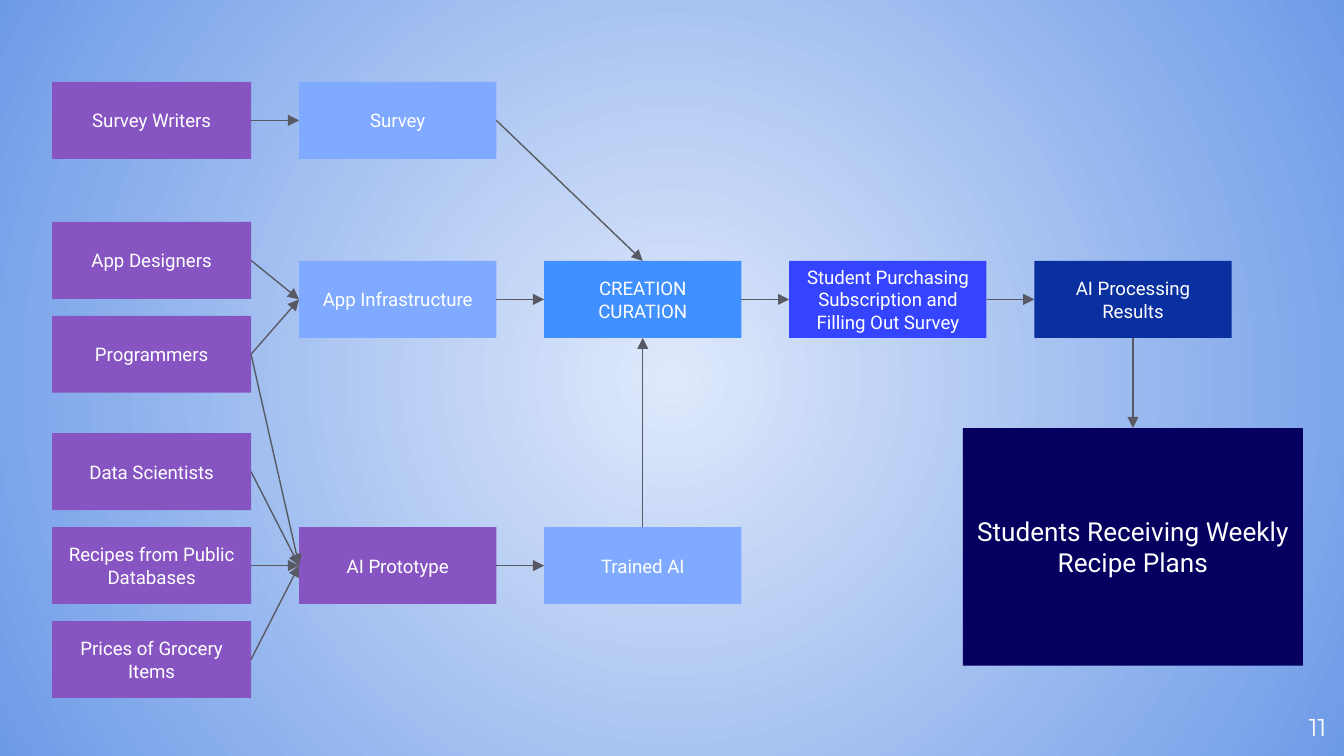
from dataclasses import dataclass

from lxml.etree import SubElement
from pptx import Presentation
from pptx.dml.color import RGBColor
from pptx.enum.shapes import MSO_CONNECTOR, MSO_SHAPE
from pptx.enum.text import MSO_ANCHOR, PP_ALIGN
from pptx.oxml.ns import qn
from pptx.util import Pt


@dataclass(frozen=True)
class Theme:
    center: str = "DFE9FB"
    edge: str = "6E9BE7"
    purple: str = "8755C2"
    light: str = "80AAFF"
    bright: str = "4190FF"
    indigo: str = "3544FF"
    navy: str = "0A2F9E"
    midnight: str = "050060"
    arrow: str = "585963"
    text: str = "FFFFFF"
    font: str = "Roboto"
    number_font: str = "Montserrat"
    body_size: float = 10
    result_size: float = 14
    number_size: float = 13


THEME = Theme()

# Grid, in points
BOX_HEIGHT = 41.2
INPUT_LEFT, INPUT_WIDTH = 27.9, 106.6
STEP_LEFT, STEP_WIDTH, STEP_PITCH = 160.2, 105.7, 131.3
STEP_COLUMNS = [STEP_LEFT + STEP_PITCH * index for index in range(4)]
SURVEY_ROW, APP_ROW, AI_ROW = 43.9, 139.8, 282.4
INPUT_PITCH = 50.3
RESULT_TOP, RESULT_WIDTH, RESULT_HEIGHT = 229.3, 182.2, 127.3
RESULT_LEFT = STEP_COLUMNS[3] + (STEP_WIDTH - RESULT_WIDTH) / 2

TOP, LEFT, BOTTOM, RIGHT = range(4)

INPUTS = [
    ("Survey Writers", SURVEY_ROW),
    ("App Designers", APP_ROW - 20.9),
    ("Programmers", APP_ROW - 20.9 + INPUT_PITCH),
    ("Data Scientists", AI_ROW - INPUT_PITCH),
    ("Recipes from Public Databases", AI_ROW),
    ("Prices of Grocery Items", AI_ROW + INPUT_PITCH),
]

# Text, column, top, colour
STEPS = [
    ("Survey", 0, SURVEY_ROW, THEME.light),
    ("App Infrastructure", 0, APP_ROW, THEME.light),
    ("AI Prototype", 0, AI_ROW, THEME.purple),
    ("CREATION CURATION", 1, APP_ROW, THEME.bright),
    ("Trained AI", 1, AI_ROW, THEME.light),
    ("Student Purchasing Subscription and Filling Out Survey", 2, APP_ROW, THEME.indigo),
    ("AI Processing Results", 3, APP_ROW, THEME.navy),
]
RESULT = "Students Receiving Weekly Recipe Plans"

# Start, its side, end, its side
ARROWS = [
    ("Survey Writers", RIGHT, "Survey", LEFT),
    ("App Infrastructure", RIGHT, "CREATION CURATION", LEFT),
    ("CREATION CURATION", RIGHT, STEPS[5][0], LEFT),
    (STEPS[5][0], RIGHT, "AI Processing Results", LEFT),
    ("AI Processing Results", BOTTOM, RESULT, TOP),
    ("Trained AI", TOP, "CREATION CURATION", BOTTOM),
    ("AI Prototype", RIGHT, "Trained AI", LEFT),
    ("App Designers", RIGHT, "App Infrastructure", LEFT),
    ("Programmers", RIGHT, "App Infrastructure", LEFT),
    ("Programmers", RIGHT, "AI Prototype", LEFT),
    ("Data Scientists", RIGHT, "AI Prototype", LEFT),
    ("Survey", RIGHT, "CREATION CURATION", TOP),
    ("Recipes from Public Databases", RIGHT, "AI Prototype", LEFT),
    ("Prices of Grocery Items", RIGHT, "AI Prototype", LEFT),
]


def set_background(slide):
    fill = slide.background.fill
    fill.gradient()
    for stop, color in zip(fill.gradient_stops, (THEME.center, THEME.edge)):
        stop.color.rgb = RGBColor.from_string(color)
    # Turn the linear gradient into a radial one
    gradient = slide.element.find(".//" + qn("a:gradFill"))
    gradient.remove(gradient.find(qn("a:lin")))
    radial = SubElement(gradient, qn("a:path"), path="circle")
    SubElement(radial, qn("a:fillToRect"), l="50000", t="50000", r="50000", b="50000")


def write_text(shape, text, size, font, alignment, inset):
    frame = shape.text_frame
    frame.word_wrap = True
    frame.vertical_anchor = MSO_ANCHOR.MIDDLE
    frame.margin_left = frame.margin_right = Pt(inset)
    frame.margin_top = frame.margin_bottom = Pt(inset)
    paragraph = frame.paragraphs[0]
    paragraph.text = text
    paragraph.alignment = alignment
    paragraph.font.size = Pt(size)
    paragraph.font.name = font
    paragraph.font.color.rgb = RGBColor.from_string(THEME.text)


def add_box(slide, text, left, top, width, height, color, size=THEME.body_size):
    shape = slide.shapes.add_shape(
        MSO_SHAPE.RECTANGLE, Pt(left), Pt(top), Pt(width), Pt(height))
    shape.shadow.inherit = False
    shape.fill.solid()
    shape.fill.fore_color.rgb = RGBColor.from_string(color)
    shape.line.fill.background()
    write_text(shape, text, size, THEME.font, PP_ALIGN.CENTER, 7.2)
    return shape


def add_arrow(slide, start, start_side, end, end_side):
    connector = slide.shapes.add_connector(MSO_CONNECTOR.STRAIGHT, 0, 0, 0, 0)
    connector.begin_connect(start, start_side)
    connector.end_connect(end, end_side)
    connector.line.color.rgb = RGBColor.from_string(THEME.arrow)
    connector.line.width = Pt(0.75)
    SubElement(connector.line._get_or_add_ln(), qn("a:tailEnd"), type="triangle")
    SubElement(connector._element.spPr, qn("a:effectLst"))


def add_slide_number(slide, number):
    shape = slide.shapes.add_textbox(Pt(667.4), Pt(373.7), Pt(43.2), Pt(31))
    write_text(shape, number, THEME.number_size, THEME.number_font, PP_ALIGN.RIGHT, 0)


def main():
    presentation = Presentation()
    presentation.slide_width, presentation.slide_height = Pt(720), Pt(405)
    slide = presentation.slides.add_slide(presentation.slide_layouts[6])
    set_background(slide)
    add_slide_number(slide, "11")

    # Boxes, kept by their text
    boxes = {RESULT: add_box(slide, RESULT, RESULT_LEFT, RESULT_TOP, RESULT_WIDTH,
                             RESULT_HEIGHT, THEME.midnight, THEME.result_size)}
    for text, top in INPUTS:
        boxes[text] = add_box(
            slide, text, INPUT_LEFT, top, INPUT_WIDTH, BOX_HEIGHT, THEME.purple)
    for text, column, top, color in STEPS:
        boxes[text] = add_box(
            slide, text, STEP_COLUMNS[column], top, STEP_WIDTH, BOX_HEIGHT, color)

    # Arrows between the boxes
    for start, start_side, end, end_side in ARROWS:
        add_arrow(slide, boxes[start], start_side, boxes[end], end_side)

    presentation.save("out.pptx")


if __name__ == "__main__":
    main()
